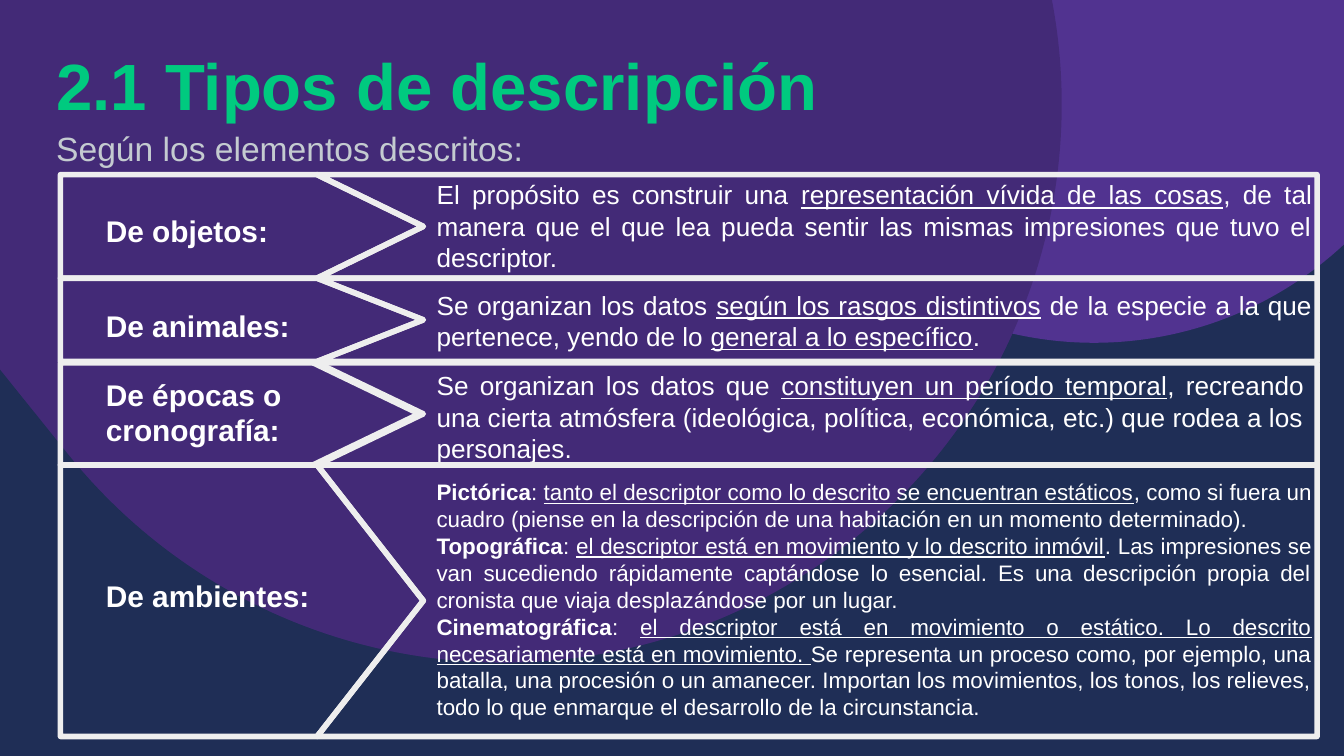
"""Build the slide on types of description, arranged as rows of arrow-shaped labels."""
from lxml import etree
from pptx import Presentation
from pptx import util as u
from pptx.dml.color import RGBColor
from pptx.enum import shapes, text
from pptx.oxml.ns import qn

THEME = {
    "font": "Arial",
    "bg": "1F2E56", "violet": "513390", "shade": "000000", "shade_alpha": 17,
    "line": "EEEEEE", "title": "00CA7F", "subtitle": "C4CBD0", "body": "FFFFFF",
    "title_pt": 35, "subtitle_pt": 18, "label_pt": 16, "body_pt": 14, "small_pt": 12,
    "line_pt": 3,
}
LEFT, NOTCH, TIP, RIGHT = 0.45, 2.36, 3.15, 9.8
LABEL_X, LABEL_W = 0.69, 2.57
INSET = 0.1

TITLE = "2.1 Tipos de descripción"
SUBTITLE = "Según los elementos descritos:"
DROPS = [
    (5.41, -2.91, 5.46, 295.2, "violet", None),
    (-0.41, -3.38, 8.31, 231.2, "violet", None),
    (-0.41, -3.38, 8.31, 231.2, "shade", THEME["shade_alpha"]),
]
ROWS = [
    {"label": "De objetos:", "top": 1.3, "bottom": 2.07, "label_box": (1.48, 0.71),
     "body_box": (1.23, 6.71, 0.91), "size": "body_pt", "body": [[
         ("El propósito es construir una ", ""),
         ("representación vívida de las cosas", "u"),
         (", de tal manera que el que lea pueda sentir las mismas impresiones "
          "que tuvo el descriptor.", "")]]},
    {"label": "De animales:", "top": 2.07, "bottom": 2.69, "label_box": (2.19, 0.71),
     "body_box": (2.05, 6.71, 0.67), "size": "body_pt", "body": [[
         ("Se organizan los datos ", ""),
         ("según los rasgos distintivos", "u"),
         (" de la especie a la que pertenece, yendo de lo ", ""),
         ("general a lo específico", "u"),
         (".", "")]]},
    {"label": "De épocas o cronografía:", "top": 2.7, "bottom": 3.46,
     "label_box": (2.7, 0.98), "shift": -0.03,
     "body_box": (2.65, 6.65, 0.91), "size": "body_pt", "body": [[
         ("Se organizan los datos que ", ""),
         ("constituyen un período temporal", "u"),
         (", recreando una cierta atmósfera (ideológica, política, económica, etc.) "
          "que rodea a los personajes.", "")]]},
    {"label": "De ambientes:", "top": 3.46, "bottom": 5.48, "label_box": (4.2, 0.47),
     "body_box": (3.46, 6.71, 2.02), "size": "small_pt", "body": [
         [("Pictórica", "b"), (": ", ""),
          ("tanto el descriptor como lo descrito se encuentran estáticos", "u"),
          (", como si fuera un cuadro (piense en la descripción de una habitación "
           "en un momento determinado).", "")],
         [("Topográfica", "b"), (": ", ""),
          ("el descriptor está en movimiento y lo descrito inmóvil", "u"),
          (". Las impresiones se van sucediendo rápidamente captándose lo esencial. "
           "Es una descripción propia del cronista que viaja desplazándose por un lugar.", "")],
         [("Cinematográfica", "b"), (": ", ""),
          ("el descriptor está en movimiento o estático. Lo descrito necesariamente "
           "está en movimiento. ", "u"),
          ("Se representa un proceso como, por ejemplo, una batalla, una procesión o un "
           "amanecer. Importan los movimientos, los tonos, los relieves, todo lo que "
           "enmarque el desarrollo de la circunstancia.", "")]]},
]


def rgb(name):
    return RGBColor.from_string(THEME[name])


def add_drop(s, x, y, size, angle, color, alpha):
    sp = s.shapes.add_shape(shapes.MSO_SHAPE.TEAR, *map(u.Inches, (x, y, size, size)))
    sp.rotation = angle
    sp.shadow.inherit = False
    sp.fill.solid()
    sp.fill.fore_color.rgb = rgb(color)
    sp.line.fill.background()
    if alpha is not None:
        clr = sp.fill._xPr.find(".//" + qn("a:srgbClr"))
        etree.SubElement(clr, qn("a:alpha")).set("val", str(alpha * 1000))


def add_outline(s, points):
    pts = [(u.Inches(x), u.Inches(y)) for x, y in points]
    builder = s.shapes.build_freeform(*pts[0])
    builder.add_line_segments(pts[1:], close=True)
    sp = builder.convert_to_shape()
    sp.shadow.inherit = False
    sp.fill.background()
    sp.line.color.rgb = rgb("line")
    sp.line.width = u.Pt(THEME["line_pt"])


def add_row_frame(s, top, bottom, shift=0):
    middle = (top + bottom) / 2
    add_outline(s, [(LEFT, top), (LEFT, bottom), (NOTCH, bottom), (TIP, middle), (NOTCH, top)])
    notch, tip = NOTCH + shift, TIP + shift
    add_outline(s, [(notch, top), (tip, middle), (notch, bottom), (RIGHT, bottom), (RIGHT, top)])


def add_text(s, box, paragraphs, color, size, align=text.PP_ALIGN.LEFT,
             anchor=text.MSO_ANCHOR.TOP):
    tf = s.shapes.add_textbox(*map(u.Inches, box)).text_frame
    tf.word_wrap = True
    tf.vertical_anchor = anchor
    tf.margin_left = tf.margin_top = tf.margin_right = tf.margin_bottom = u.Inches(INSET)
    for i, runs in enumerate(paragraphs):
        p = tf.add_paragraph() if i else tf.paragraphs[0]
        p.alignment = align
        for words, style in runs:
            r = p.add_run()
            r.text = words
            r.font.name = THEME["font"]
            r.font.size = u.Pt(THEME[size])
            r.font.color.rgb = rgb(color)
            r.font.bold = "b" in style
            r.font.underline = "u" in style


def main():
    prs = Presentation()
    prs.slide_width = u.Inches(10)
    prs.slide_height = prs.slide_width * 9 // 16
    s = prs.slides.add_slide(prs.slide_layouts[6])
    s.background.fill.solid()
    s.background.fill.fore_color.rgb = rgb("bg")
    for drop in DROPS:
        add_drop(s, *drop)
    add_text(s, (0.32, 0, 9.35, 1.02), [[(TITLE, "b")]], "title", "title_pt",
             text.PP_ALIGN.JUSTIFY, text.MSO_ANCHOR.BOTTOM)
    add_text(s, (0.32, 0.85, 5.25, 0.63), [[(SUBTITLE, "")]], "subtitle", "subtitle_pt")
    for row in ROWS:
        add_row_frame(s, row["top"], row["bottom"], row.get("shift", 0))
        y, h = row["label_box"]
        add_text(s, (LABEL_X, y, LABEL_W, h), [[(row["label"], "b")]], "body", "label_pt")
        y, w, h = row["body_box"]
        add_text(s, (TIP, y, w, h), row["body"], "body", row["size"], text.PP_ALIGN.JUSTIFY)
    prs.save("out.pptx")


if __name__ == "__main__":
    main()
